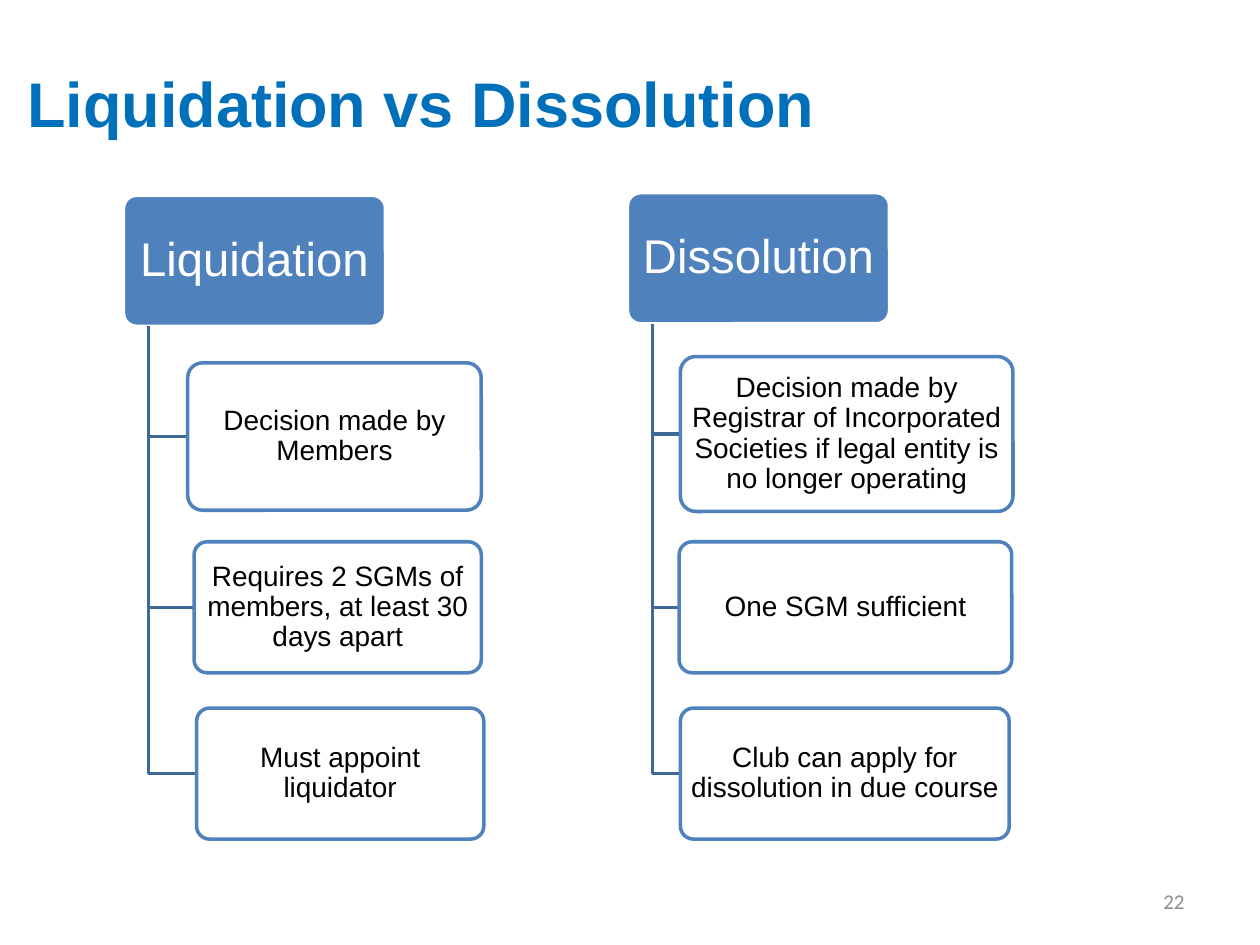
from dataclasses import dataclass

from pptx import Presentation
from pptx.dml.color import RGBColor
from pptx.enum.shapes import MSO_SHAPE
from pptx.enum.text import MSO_ANCHOR, PP_ALIGN
from pptx.util import Inches, Pt

COLORS = {
    "title": "0070BB",
    "accent": "4F81BD",
    "branch": "3F6797",
    "white": "FFFFFF",
    "black": "000000",
    "number": "8C8C8C",
}
TRUNK_INDENT = 0.2


@dataclass(frozen=True)
class Node:
    text: str
    left: float
    top: float
    width: float
    height: float = 1.04

    @property
    def middle(self) -> float:
        return self.top + self.height / 2

    @property
    def bottom(self) -> float:
        return self.top + self.height


@dataclass(frozen=True)
class Tree:
    root: Node
    leaves: tuple[Node, ...]


TREES = (
    Tree(
        Node("Liquidation", 0.98, 1.55, 2.08),
        (
            Node("Decision made by Members", 1.49, 2.88, 2.33, 1.17),
            Node("Requires 2 SGMs of members, at least 30 days apart", 1.54, 4.3, 2.28),
            Node("Must appoint liquidator", 1.56, 5.62, 2.28),
        ),
    ),
    Tree(
        Node("Dissolution", 4.98, 1.53, 2.08),
        (
            Node(
                "Decision made by Registrar of Incorporated Societies "
                "if legal entity is no longer operating",
                5.4, 2.83, 2.64, 1.23,
            ),
            Node("One SGM sufficient", 5.39, 4.3, 2.64),
            Node("Club can apply for dissolution in due course", 5.4, 5.62, 2.61),
        ),
    ),
)


def color(name: str) -> RGBColor:
    return RGBColor.from_string(COLORS[name])


def write(shape, text: str, *, size: float, ink: str, font: str = "Arial",
          bold: bool = False, align=PP_ALIGN.LEFT, spacing: float = 1.0,
          inset: tuple[float, float] = (0.1, 0.05)) -> None:
    frame = shape.text_frame
    frame.word_wrap = True
    frame.vertical_anchor = MSO_ANCHOR.MIDDLE
    frame.margin_left = frame.margin_right = Inches(inset[0])
    frame.margin_top = frame.margin_bottom = Inches(inset[1])
    para = frame.paragraphs[0]
    para.alignment = align
    para.line_spacing = spacing
    span = para.add_run()
    span.text = text
    span.font.name = font
    span.font.size = Pt(size)
    span.font.bold = bold
    span.font.color.rgb = color(ink)


def add_label(page, node: Node, **text_format) -> None:
    box = page.shapes.add_textbox(
        Inches(node.left), Inches(node.top), Inches(node.width), Inches(node.height))
    write(box, node.text, **text_format)


def add_node(page, node: Node, *, fill: str, line: str, **text_format) -> None:
    box = page.shapes.add_shape(
        MSO_SHAPE.ROUNDED_RECTANGLE,
        Inches(node.left), Inches(node.top), Inches(node.width), Inches(node.height))
    box.adjustments[0] = 0.1
    box.shadow.inherit = False
    box.fill.solid()
    box.fill.fore_color.rgb = color(fill)
    box.line.color.rgb = color(line)
    box.line.width = Pt(2)
    write(box, node.text, align=PP_ALIGN.CENTER, spacing=0.9, **text_format)


def add_branch(page, root: Node, leaf: Node) -> None:
    trunk = Inches(root.left + TRUNK_INDENT)
    middle = Inches(leaf.middle)
    builder = page.shapes.build_freeform(trunk, Inches(root.bottom))
    builder.add_line_segments(
        [(trunk, middle), (Inches(leaf.left), middle)], close=False)
    branch = builder.convert_to_shape()
    branch.shadow.inherit = False
    branch.fill.background()
    branch.line.color.rgb = color("branch")
    branch.line.width = Pt(2)


def add_tree(page, tree: Tree) -> None:
    add_node(page, tree.root, fill="accent", line="white",
             size=27, ink="white", inset=(0.06, 0.04))
    for leaf in tree.leaves:
        add_branch(page, tree.root, leaf)
        add_node(page, leaf, fill="white", line="accent",
                 size=16, ink="black", inset=(0.03, 0.02))


def main() -> None:
    deck = Presentation()
    deck.slide_width = Inches(10)
    deck.slide_height = Inches(7.5)
    page = deck.slides.add_slide(deck.slide_layouts[6])
    add_label(page, Node("Liquidation vs Dissolution", 0.12, 0.19, 9, 1.25),
              size=36, ink="title", bold=True)
    for tree in TREES:
        add_tree(page, tree)
    add_label(page, Node("22", 7.17, 6.95, 2.33, 0.4),
              size=12, ink="number", font="Calibri", align=PP_ALIGN.RIGHT)
    deck.save("out.pptx")


if __name__ == "__main__":
    main()
